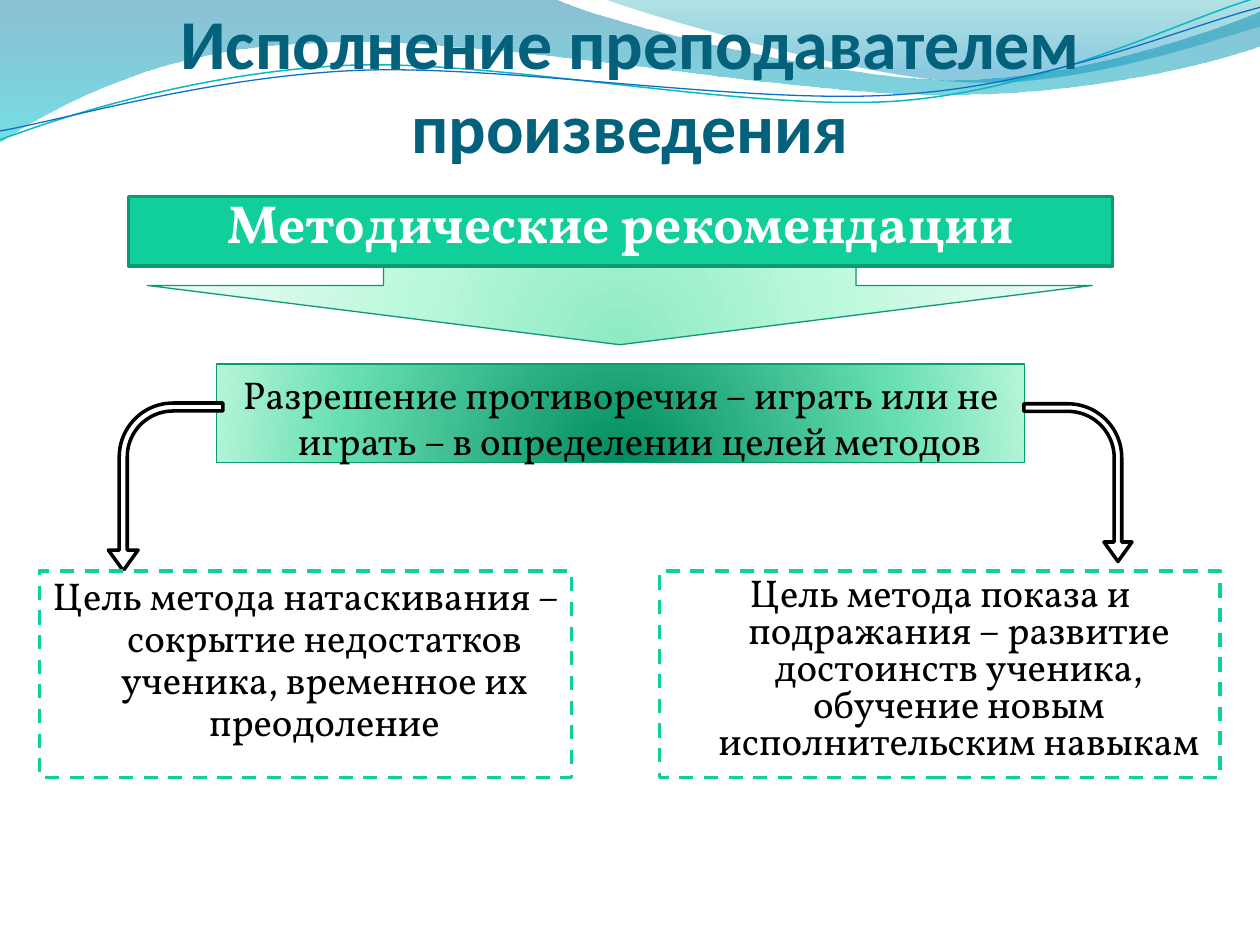
from dataclasses import dataclass

from lxml import etree
from pptx import Presentation
from pptx.dml.color import RGBColor
from pptx.enum.dml import MSO_LINE
from pptx.enum.shapes import MSO_SHAPE
from pptx.enum.text import MSO_ANCHOR, PP_ALIGN
from pptx.oxml.ns import qn
from pptx.util import Cm, Pt

RECTANGLE = MSO_SHAPE.RECTANGLE
DOWN_ARROW = MSO_SHAPE.DOWN_ARROW
BENT_ARROW = MSO_SHAPE.BENT_ARROW
DASH = MSO_LINE.DASH
CENTER = PP_ALIGN.CENTER
TOP = MSO_ANCHOR.TOP
BOTTOM = MSO_ANCHOR.BOTTOM


@dataclass(frozen=True)
class Theme:
    title: str = "04617B"
    accent: str = "10CF9B"
    accent_dark: str = "0C9973"
    outline: str = "0A9B74"
    black: str = "000000"
    white: str = "FFFFFF"
    wave_cyan: str = "0AB8BF"
    wave_blue: str = "0F6FC6"
    title_font: str = "Calibri"
    body_font: str = "Vollkorn"
    title_size: float = 40
    heading_size: float = 30.6
    body_size: float = 22.1
    # Gradient stops: position, colour, opacity in percent
    wide_wave: tuple = ((0, "0074A1", 45), (100, "00C6CF", 55))
    right_wave: tuple = ((0, "00A1A9", 30), (80, "008BBF", 45))
    pale_green: tuple = ((0, "8DEAC2", 100), (43, "BAF8DB", 100),
                         (93, "EAFCF3", 100), (100, "F7FFFB", 100))
    deep_green: tuple = ((0, "008C60", 100), (68, "65DEB0", 100),
                         (100, "B2F4D6", 100))


theme = Theme()


def style_shape(shape, fill=None, radial=False, line=None, width=0.75, dash=None):
    """Fill with a colour, or with a tuple of gradient stops, and set the outline."""
    shape.shadow.inherit = False
    if isinstance(fill, tuple):
        shape.fill.gradient()
        gradient = shape._element.spPr.find(qn("a:gradFill"))
        for child in list(gradient):
            gradient.remove(child)
        stops = etree.SubElement(gradient, qn("a:gsLst"))
        for position, color, opacity in fill:
            stop = etree.SubElement(stops, qn("a:gs"), pos=str(position * 1000))
            rgb = etree.SubElement(stop, qn("a:srgbClr"), val=color)
            if opacity < 100:
                etree.SubElement(rgb, qn("a:alpha"), val=str(opacity * 1000))
        if radial:
            path = etree.SubElement(gradient, qn("a:path"), {"path": "circle"})
            etree.SubElement(path, qn("a:fillToRect"),
                             l="50000", t="130000", r="50000", b="-30000")
        else:
            etree.SubElement(gradient, qn("a:lin"), ang="5400000", scaled="0")
    elif fill:
        shape.fill.solid()
        shape.fill.fore_color.rgb = RGBColor.from_string(fill)
    else:
        shape.fill.background()
    if line:
        shape.line.color.rgb = RGBColor.from_string(line)
        shape.line.width = Pt(width)
        shape.line.dash_style = dash
    else:
        shape.line.fill.background()


def write_text(shape, text, size=theme.body_size, font=theme.body_font,
               color=theme.black, bold=False, spacing=1.0, anchor=TOP,
               hanging=Cm(0.76), side_inset=Cm(0.25), bottom_inset=Cm(0.13)):
    frame = shape.text_frame
    frame.word_wrap = True
    frame.vertical_anchor = anchor
    frame.margin_left = frame.margin_right = side_inset
    frame.margin_top, frame.margin_bottom = Cm(0.13), bottom_inset
    paragraph = frame.paragraphs[0]
    paragraph.text = text
    paragraph.alignment = CENTER
    paragraph.line_spacing = spacing
    properties = paragraph._p.get_or_add_pPr()
    properties.set("marL", str(hanging))
    properties.set("indent", str(-hanging))
    paragraph.font.size = Pt(size)
    paragraph.font.name = font
    paragraph.font.bold = bold
    paragraph.font.color.rgb = RGBColor.from_string(color)


presentation = Presentation()
presentation.slide_width, presentation.slide_height = Cm(25.4), Cm(19.05)
slide = presentation.slides.add_slide(presentation.slide_layouts[6])
shapes = slide.shapes

# Waves: a segment of one point is a line, of three points a Bezier curve
waves = [
    ((0, 0),
     [[(11.18, -0.03)],
      [(12.09, 0.43), (16.87, 1.6), (19.25, 1.6)],
      [(21.67, 1.6), (24.33, 0.66), (25.4, 0.23)],
      [(25.43, 0.91)],
      [(24.97, 1.12), (22.1, 1.93), (18.95, 1.91)],
      [(15.8, 1.91), (9.7, 0.71), (6.53, 0.86)],
      [(3.28, 0.91), (1.17, 2.11), (-0.03, 2.87)]],
     0, dict(fill=theme.wide_wave)),
    ((12.17, -0.03),
     [[(12.93, 0.28), (17.32, 1.57), (19.53, 1.65)],
      [(21.74, 1.75), (24.41, 0.81), (25.4, 0.53)],
      [(25.4, 0)]],
     0, dict(fill=theme.right_wave)),
    ((-0.05, 2.22),
     [[(1.19, 1.82), (4.02, 1.04), (7.05, 1.05)],
      [(10.05, 1.07), (15.02, 2.37), (18.08, 2.29)],
      [(21.13, 2.2), (23.86, 0.91), (25.41, 0.55)]],
     357.3, dict(line=theme.wave_cyan, width=0.85)),
    ((-0.04, 2.04),
     [[(1.16, 1.9), (4.17, 1.15), (7.2, 1.16)],
      [(10.25, 1.18), (15.13, 2.25), (18.19, 2.16)],
      [(21.22, 2.1), (23.93, 1.06), (25.45, 0.75)]],
     357.3, dict(line=theme.wave_blue)),
]
for (start_x, start_y), segments, rotation, look in waves:
    builder = shapes.build_freeform(Cm(start_x), Cm(start_y))
    builder.add_line_segments([(Cm(x), Cm(y)) for segment in segments for x, y in segment],
                              close="fill" in look)
    wave = builder.convert_to_shape()
    steps = iter(list(wave._element.spPr.iter(qn("a:lnTo"))))
    for segment in segments:
        lines = [next(steps) for _ in segment]
        if len(segment) == 3:
            curve = etree.Element(qn("a:cubicBezTo"))
            lines[0].addprevious(curve)
            for line in lines:
                curve.append(line[0])
                line.getparent().remove(line)
    wave.rotation = rotation
    style_shape(wave, **look)

down_arrow = shapes.add_shape(DOWN_ARROW, Cm(2.97), Cm(4.56), Cm(19.05), Cm(2.39))
style_shape(down_arrow, fill=theme.pale_green, radial=True, line=theme.outline)

title = shapes.add_textbox(0, Cm(-0.58), Cm(25.4), Cm(3.96))
write_text(title, "Исполнение преподавателем произведения", size=theme.title_size,
           font=theme.title_font, color=theme.title, bold=True, anchor=BOTTOM,
           hanging=0, side_inset=0, bottom_inset=0)

conflict = shapes.add_shape(RECTANGLE, Cm(4.37), Cm(7.34), Cm(16.28), Cm(1.98))
style_shape(conflict, fill=theme.deep_green, radial=True, line=theme.outline)
write_text(conflict, "Разрешение противоречия – играть или не играть – "
                     "в определении целей методов")

heading = shapes.add_shape(RECTANGLE, Cm(2.59), Cm(3.96), Cm(19.84), Cm(1.4))
style_shape(heading, fill=theme.accent, line=theme.accent_dark, width=2)
write_text(heading, "Методические рекомендации", size=theme.heading_size,
           color=theme.white, bold=True, spacing=0.8)

for left, top, width, height, rotation, bend, flipped in [
    (20.14, 8.64, 3.18, 2.18, 90, 0.5, False),
    (1.65, 8.66, 3.38, 2.31, 270, 0.47, True),
]:
    arrow = shapes.add_shape(BENT_ARROW, Cm(left), Cm(top), Cm(width), Cm(height))
    style_shape(arrow, fill=theme.white, line=theme.black, width=2)
    arrow.rotation = rotation
    for index, value in enumerate((0.07, 0.13, 0.18, bend)):
        arrow.adjustments[index] = value
    if flipped:
        arrow._element.spPr.find(qn("a:xfrm")).set("flipH", "1")

for left, width, spacing, text in [
    (0.8, 10.72, 0.9, "Цель метода натаскивания – сокрытие недостатков ученика, "
                      "временное их преодоление"),
    (13.3, 11.3, 0.8, "Цель метода показа и подражания – развитие достоинств "
                      "ученика, обучение новым исполнительским навыкам"),
]:
    goal = shapes.add_shape(RECTANGLE, Cm(left), Cm(11.51), Cm(width), Cm(4.17))
    style_shape(goal, fill=theme.white, line=theme.accent, width=2, dash=DASH)
    write_text(goal, text, spacing=spacing)

presentation.save("out.pptx")
